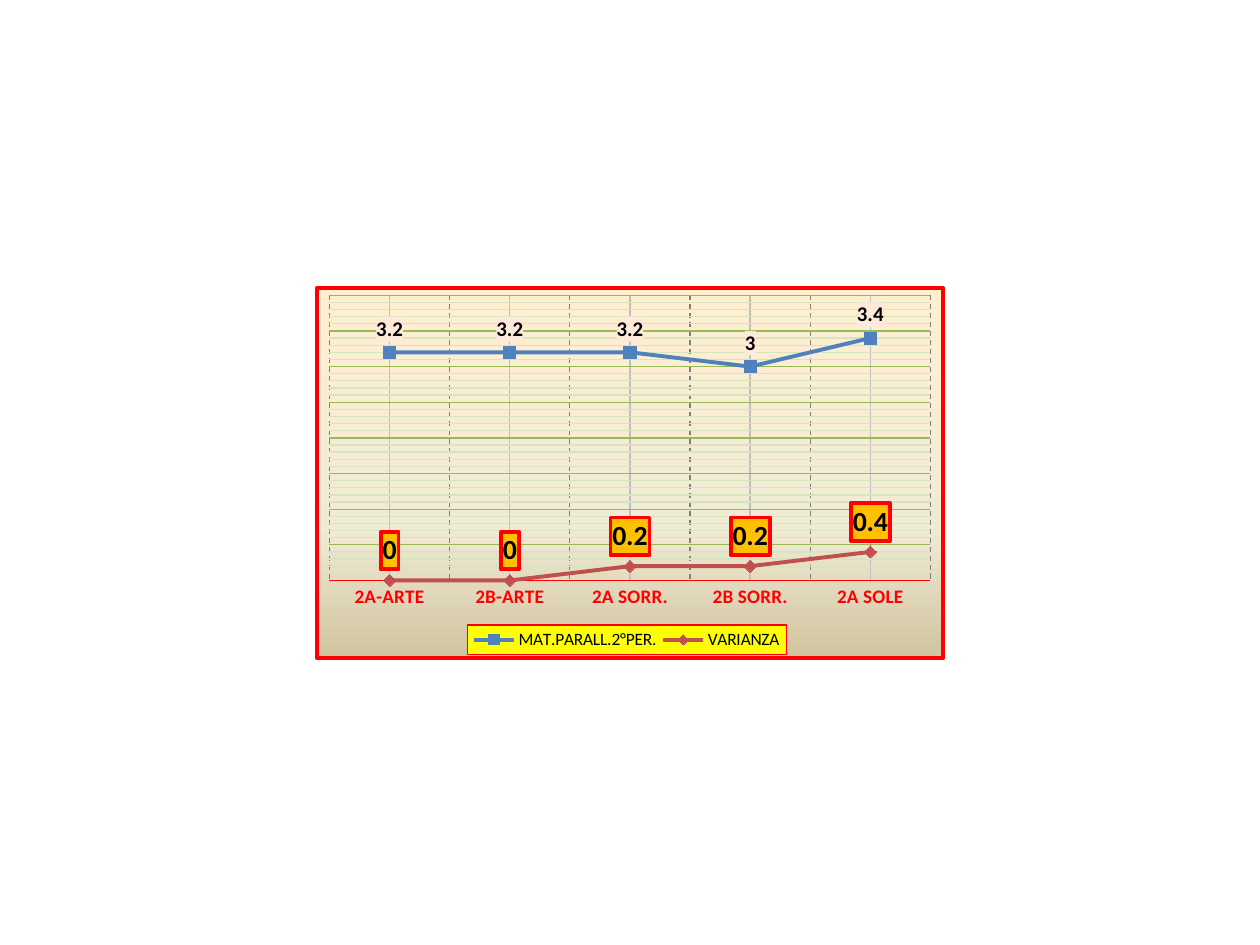
"""Build a slide with a line chart of parallel maths test averages and variance."""
import lxml.etree
import pptx
import pptx.chart.data
import pptx.dml.color
import pptx.enum.chart
import pptx.oxml
import pptx.oxml.ns
import pptx.util

qn = pptx.oxml.ns.qn
Inches = pptx.util.Inches
Pt = pptx.util.Pt


def color(value):
    return pptx.dml.color.RGBColor.from_string(value)


def box_properties(fill, line, width):
    outline = f'<a:ln w="{Pt(width)}"><a:solidFill><a:srgbClr val="{line}"/></a:solidFill></a:ln>' if line else ""
    return pptx.oxml.parse_xml(
        f'<c:spPr {pptx.oxml.ns.nsdecls("c", "a")}>{fill}{outline}</c:spPr>')


SOLID = '<a:solidFill><a:srgbClr val="{}"/></a:solidFill>'
STOPS = [(0, "FFEFD1"), (65, "F0EBD5"), (100, "D1C39F")]
GRADIENT = '<a:gradFill><a:gsLst>' + "".join(
    f'<a:gs pos="{position * 1000}"><a:srgbClr val="{stop}"/></a:gs>' for position, stop in STOPS
) + '</a:gsLst><a:lin ang="5400000" scaled="0"/></a:gradFill>'

presentation = pptx.Presentation()
presentation.slide_width = Inches(10)
presentation.slide_height = Inches(7.5)
slide = presentation.slides.add_slide(presentation.slide_layouts[6])

data = pptx.chart.data.CategoryChartData()
data.categories = ["2A-ARTE", "2B-ARTE", "2A SORR.", "2B SORR.", "2A SOLE"]
data.add_series("MAT.PARALL.2°PER.", [3.2, 3.2, 3.2, 3, 3.4])
data.add_series("VARIANZA", [0, 0, 0.2, 0.2, 0.4])
chart = slide.shapes.add_chart(
    pptx.enum.chart.XL_CHART_TYPE.LINE_MARKERS,
    Inches(2.5), Inches(2.27), Inches(5), Inches(2.97), data).chart
chart.has_title = False
chart.font.name = "Calibri"
chart.font.size = Pt(10)
chart.font.color.rgb = color("000000")
chart._chartSpace.find(qn("c:chart")).addnext(box_properties(GRADIENT, "FF0000", 2.25))

category_axis = chart.category_axis
category_axis.major_tick_mark = pptx.enum.chart.XL_TICK_MARK.NONE
category_axis.format.line.color.rgb = color("FF0000")
category_axis.format.line.width = Pt(0.75)
category_axis.tick_labels.font.size = Pt(11)
category_axis.tick_labels.font.bold = True
category_axis.tick_labels.font.color.rgb = color("FF0000")

value_axis = chart.value_axis
value_axis.minimum_scale = 0
value_axis.maximum_scale = 4
value_axis.major_unit = 0.5
value_axis.minor_unit = 0.1
value_axis.visible = False

for axis, major, minor in [(category_axis, "7F7F7F", "BFBFBF"), (value_axis, "98B955", "D7E4BD")]:
    axis.has_major_gridlines = True
    axis.major_gridlines.format.line.color.rgb = color(major)
    axis.major_gridlines.format.line.width = Pt(0.75)
    axis.has_minor_gridlines = True
    axis._element.find(qn("c:minorGridlines")).append(box_properties("", minor, 0.75))
category_axis.major_gridlines.format.line.dash_style = pptx.enum.dml.MSO_LINE.DASH

Marker = pptx.enum.chart.XL_MARKER_STYLE
styles = [
    ("4F81BD", Marker.SQUARE, 7, 12, "FDEADA", None),
    ("C0504D", Marker.DIAMOND, 7, 16, "FFC000", "FF0000"),
]
for series, (tone, marker, marker_size, label_size, label_fill, label_line) in zip(chart.plots[0].series, styles):
    series.smooth = False
    series.format.line.color.rgb = color(tone)
    series.format.line.width = Pt(2.25)
    series.marker.style = marker
    series.marker.size = marker_size
    series.marker.format.fill.solid()
    series.marker.format.fill.fore_color.rgb = color(tone)
    series.marker.format.line.color.rgb = color(tone)
    labels = series.data_labels
    labels.show_value = True
    labels.position = pptx.enum.chart.XL_LABEL_POSITION.ABOVE
    labels.font.size = Pt(label_size)
    labels.font.bold = True
    labels.font.color.rgb = color("000000")
    labels._element.find(qn("c:txPr")).addprevious(
        box_properties(SOLID.format(label_fill), label_line, 2.25))

chart.has_legend = True
legend = chart.legend
legend.position = pptx.enum.chart.XL_LEGEND_POSITION.BOTTOM
legend.include_in_layout = False
legend.font.size = Pt(10)
legend._element.find(qn("c:txPr")).addprevious(
    box_properties(SOLID.format("FFFF00"), "FF0000", 0.75))

plot_area = chart._chartSpace.find(qn("c:chart")).find(qn("c:plotArea"))
for parent, place, target, bounds in [
    (plot_area, 0, '<c:layoutTarget val="inner"/>', (0.02, 0.02, 0.96, 0.77)),
    (legend._element, 1, "", (0.24, 0.91, 0.51, 0.08)),
]:
    for old_layout in parent.findall(qn("c:layout")):
        parent.remove(old_layout)
    modes = '<c:xMode val="edge"/><c:yMode val="edge"/>'
    sizes = "".join(f'<c:{side} val="{value}"/>' for side, value in zip("xywh", bounds))
    parent.insert(place, pptx.oxml.parse_xml(
        f'<c:layout {pptx.oxml.ns.nsdecls("c")}><c:manualLayout>{target}{modes}{sizes}'
        '</c:manualLayout></c:layout>'))

presentation.save("out.pptx")
